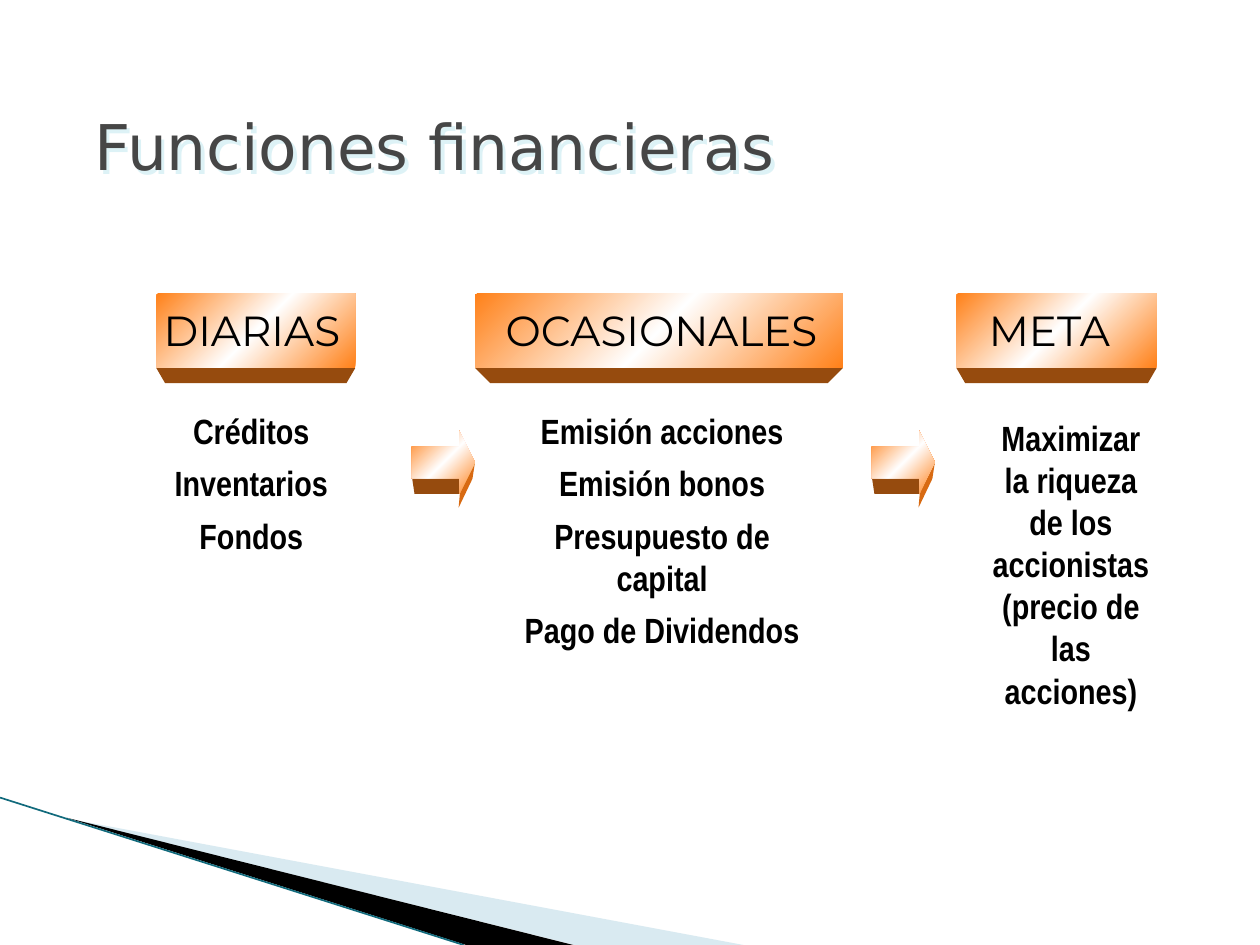
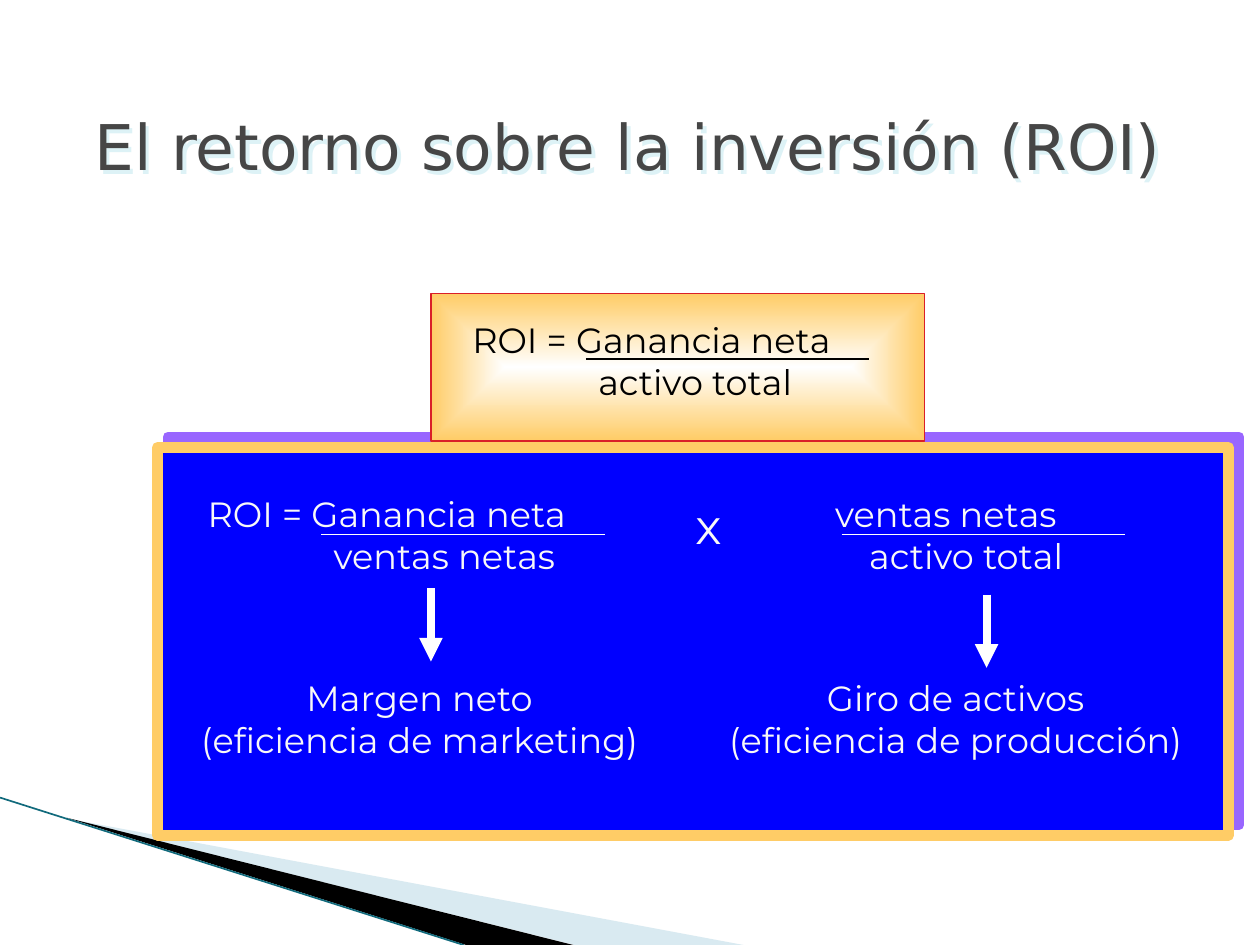
from dataclasses import dataclass

from lxml import etree
from pptx import Presentation
from pptx.dml.color import RGBColor
from pptx.enum.shapes import MSO_CONNECTOR as Connector, MSO_SHAPE as Preset
from pptx.enum.text import MSO_ANCHOR as Anchor, PP_ALIGN as Align
from pptx.oxml import parse_xml
from pptx.oxml.ns import nsdecls, qn
from pptx.util import Inches, Pt

BLACK = RGBColor(0x00, 0x00, 0x00)
WHITE = RGBColor(0xFF, 0xFF, 0xFF)
PALE = RGBColor(0xF8, 0xF8, 0xF8)
TITLE_GREY = RGBColor(0x46, 0x46, 0x46)
TITLE_SHADOW = RGBColor(0xDD, 0xF2, 0xF6)
BAND_BLUE = RGBColor(0xA0, 0xCB, 0xDC)
BAND_TEAL = RGBColor(0x11, 0x6A, 0x7C)
ORANGE = RGBColor(0xFF, 0x81, 0x19)
DARK_ORANGE = RGBColor(0xD8, 0x6A, 0x12)
BROWN = RGBColor(0x96, 0x4B, 0x0E)
BLUE = RGBColor(0x00, 0x00, 0xFF)
GOLD = RGBColor(0xFF, 0xCC, 0x66)
PURPLE = RGBColor(0x99, 0x66, 0xFF)
RED = RGBColor(0xDA, 0x1F, 0x28)

TITLE = dict(size=Pt(36), name="DejaVu Sans", color=TITLE_GREY)
HEADING = dict(size=Pt(24), name="Montserrat", color=BLACK)
ITEM = dict(size=Pt(20), name="Arial Narrow", color=BLACK, bold=True)
FORMULA = dict(size=Pt(20), name="Montserrat", color=BLACK)
PALE_FORMULA = FORMULA | dict(color=PALE)
TIMES = PALE_FORMULA | dict(size=Pt(28))

DIAGONAL = '<a:lin ang="2700000" scaled="1"/>'
FROM_CENTRE = '<a:path path="shape"><a:fillToRect l="50000" t="50000" r="50000" b="50000"/></a:path>'


@dataclass(frozen=True)
class Frame:
    """A rectangle in inches."""
    left: float
    top: float
    width: float
    height: float

    def lengths(self) -> tuple:
        """Return the four sides as slide lengths."""
        return tuple(Inches(side) for side in (self.left, self.top, self.width, self.height))


@dataclass(frozen=True)
class FunctionColumn:
    """A group of financial functions under a raised heading."""
    heading: str
    block: Frame
    heading_frame: Frame
    align: Align
    bevel: float
    items: tuple
    items_frame: Frame


@dataclass(frozen=True)
class Fraction:
    """A numerator over a denominator with a rule between them."""
    lines: tuple
    frame: Frame
    indents: tuple
    rule_left: float
    rule_top: float
    style: dict
    rule_color: RGBColor


COLUMNS = (
    FunctionColumn("DIARIAS", Frame(1.24, 2.33, 1.58, 0.59), Frame(1.2, 2.37, 1.75, 0.5),
                   Align.LEFT, 0.07, ("Créditos", "Inventarios", "Fondos"),
                   Frame(0.91, 3.2, 2.17, 1.3)),
    FunctionColumn("OCASIONALES", Frame(3.77, 2.33, 2.92, 0.59), Frame(3.77, 2.37, 2.96, 0.5),
                   Align.CENTER, 0.12,
                   ("Emisión acciones", "Emisión bonos", "Presupuesto de capital", "Pago de Dividendos"),
                   Frame(3.91, 3.2, 2.69, 2.07)),
    FunctionColumn("META", Frame(7.59, 2.33, 1.59, 0.59), Frame(7.75, 2.37, 1.38, 0.5),
                   Align.LEFT, 0.07,
                   ("Maximizar la riqueza de los accionistas (precio de las acciones)",),
                   Frame(7.75, 3.26, 1.5, 2.43)),
)
ARROW_LEFTS = (3.27, 6.92)

FRACTIONS = (
    Fraction(("ROI = Ganancia neta", "activo total"), Frame(3.65, 2.48, 3.33, 0.77),
             (0, 1), 4.65, 2.85, FORMULA, BLACK),
    Fraction(("ROI = Ganancia neta", "ventas netas"), Frame(1.55, 3.86, 3.33, 0.77),
             (0, 1), 2.55, 4.24, PALE_FORMULA, WHITE),
    Fraction(("ventas netas", "activo total"), Frame(5.8, 3.86, 3.09, 0.77),
             (0.73, 1), 6.68, 4.24, PALE_FORMULA, WHITE),
)
MEANINGS = (
    (("Margen neto", "(eficiencia de marketing)"), Frame(1.32, 5.32, 4.02, 0.77)),
    (("Giro de activos", "(eficiencia de producción)"), Frame(5.5, 5.32, 4.17, 0.77)),
)
DOWN_ARROWS = ((3.42, 4.67), (7.83, 4.72))


def add_shadow(shape, color: RGBColor, distance: float, degrees: int) -> None:
    """Give a shape a hard offset shadow."""
    shape.shadow.inherit = False
    effects = shape._element.spPr.find(qn("a:effectLst"))
    effects.append(parse_xml(
        f'<a:outerShdw {nsdecls("a")} blurRad="0" dist="{Pt(distance)}" dir="{degrees * 60000}" '
        f'algn="ctr" rotWithShape="0"><a:srgbClr val="{color}"/></a:outerShdw>'))


def set_gradient(shape, colors: tuple, direction: str) -> None:
    """Fill a shape with evenly spaced gradient colours."""
    stops = "".join(
        f'<a:gs pos="{100000 * index // (len(colors) - 1)}"><a:srgbClr val="{color}"/></a:gs>'
        for index, color in enumerate(colors))
    shape._element.spPr.find(qn("a:prstGeom")).addnext(parse_xml(
        f'<a:gradFill {nsdecls("a")} rotWithShape="1"><a:gsLst>{stops}</a:gsLst>{direction}</a:gradFill>'))


def add_preset(page, preset: Preset, frame: Frame):
    """Add a flat preset shape without outline."""
    shape = page.shapes.add_shape(preset, *frame.lengths())
    shape.shadow.inherit = False
    shape.line.fill.background()
    return shape


def add_polygon(page, points: tuple, color: RGBColor):
    """Add a filled polygon without outline."""
    (start_x, start_y), *others = [(Inches(x), Inches(y)) for x, y in points]
    builder = page.shapes.build_freeform(start_x, start_y)
    builder.add_line_segments(others, close=True)
    shape = builder.convert_to_shape()
    shape.shadow.inherit = False
    shape.fill.solid()
    shape.fill.fore_color.rgb = color
    shape.line.fill.background()
    return shape


def add_line(page, start: tuple, end: tuple, color: RGBColor, width: float, arrow: bool = False) -> None:
    """Add a straight line, optionally ending in an arrowhead."""
    line = page.shapes.add_connector(
        Connector.STRAIGHT, *(Inches(value) for value in (*start, *end)))
    line.line.color.rgb = color
    line.line.width = Pt(width)
    if arrow:
        etree.SubElement(line.line._get_or_add_ln(), qn("a:tailEnd"), type="triangle")
    etree.SubElement(line._element.spPr, qn("a:effectLst"))


def add_text(page, lines: tuple, frame: Frame, style: dict, align: Align = Align.LEFT,
             gap: float = 0, indents: tuple = (), **para_format):
    """Add a text box with one paragraph for each line."""
    box = page.shapes.add_textbox(*frame.lengths())
    box.text_frame.word_wrap = True
    for index, line in enumerate(lines):
        para = box.text_frame.paragraphs[0] if index == 0 else box.text_frame.add_paragraph()
        if indents and indents[index]:
            para._p.get_or_add_pPr().set("marL", str(Inches(indents[index])))
        for name, value in dict(alignment=align, **para_format).items():
            setattr(para, name, value)
        if index and gap:
            para.space_before = Pt(gap)
        span = para.add_run()
        span.text = line
        for name, value in style.items():
            if name == "color":
                span.font.color.rgb = value
            else:
                setattr(span.font, name, value)
    return box


def add_page(deck, title: str):
    """Add a blank page with the corner bands."""
    page = deck.slides.add_slide(deck.slide_layouts[6])
    light = add_polygon(page, ((0.55, 6.5), (5.9, 7.5), (4.56, 7.5)), BAND_BLUE)
    color = light._element.spPr.find(qn("a:solidFill"))[0]
    etree.SubElement(color, qn("a:alpha"), val="40000")
    add_polygon(page, ((0.53, 6.49), (4.55, 7.5), (3.7, 7.5)), BLACK)
    add_line(page, (0, 6.33), (3.68, 7.5), BAND_TEAL, 0.95)
    box = add_text(page, (title,), Frame(0.65, 0.29, 9.1, 1.21), TITLE, line_spacing=0.8)
    box.text_frame.vertical_anchor = Anchor.BOTTOM
    add_shadow(box, TITLE_SHADOW, 3, 45)
    return page


def draw_column(page, column: FunctionColumn) -> None:
    """Draw a raised heading and the functions below it."""
    block = column.block
    right, bottom = block.left + block.width, block.top + block.height
    add_polygon(page, ((block.left, bottom), (right, bottom),
                       (right - column.bevel, bottom + 0.12),
                       (block.left + column.bevel, bottom + 0.12)), BROWN)
    face = add_preset(page, Preset.RECTANGLE, block)
    set_gradient(face, (ORANGE, WHITE, ORANGE), DIAGONAL)
    add_text(page, (column.heading,), column.heading_frame, HEADING, column.align)
    add_text(page, column.items, column.items_frame, ITEM, Align.CENTER, gap=6)


def draw_raised_arrow(page, left: float, top: float = 3.42) -> None:
    """Draw a right arrow with visible lower sides."""
    shaft = ((0, 0.37), (0.38, 0.37), (0.38, 0.5), (0.02, 0.5))
    head = ((0.5, 0.25), (0.48, 0.38), (0.37, 0.61), (0.38, 0.5))
    for side, color in ((shaft, BROWN), (head, DARK_ORANGE)):
        add_polygon(page, tuple((left + x, top + y) for x, y in side), color)
    arrow = add_preset(page, Preset.RIGHT_ARROW, Frame(left, top, 0.5, 0.5))
    arrow.adjustments[1] = 0.25
    set_gradient(arrow, (ORANGE, WHITE, ORANGE), DIAGONAL)


def draw_fraction(page, fraction: Fraction) -> None:
    """Draw the two lines of a fraction and its rule."""
    add_text(page, fraction.lines, fraction.frame, fraction.style, indents=fraction.indents)
    add_line(page, (fraction.rule_left, fraction.rule_top),
             (fraction.rule_left + 2.25, fraction.rule_top), fraction.rule_color, 0.75)


def build_functions(deck) -> None:
    """Build the page of financial functions."""
    page = add_page(deck, "Funciones financieras")
    for column in COLUMNS:
        draw_column(page, column)
    for left in ARROW_LEFTS:
        draw_raised_arrow(page, left)


def build_return(deck) -> None:
    """Build the page on return on investment."""
    page = add_page(deck, "El retorno sobre la inversión (ROI)")
    panel = add_preset(page, Preset.RECTANGLE, Frame(1.25, 3.55, 8.5, 3.08))
    panel.fill.solid()
    panel.fill.fore_color.rgb = BLUE
    add_shadow(panel, PURPLE, 8.5, 315)
    summary = add_preset(page, Preset.RECTANGLE, Frame(3.42, 2.33, 3.92, 1.17))
    set_gradient(summary, (WHITE, GOLD), FROM_CENTRE)
    for shape, color, width in ((panel, GOLD, 6), (summary, RED, 0.75)):
        shape.line.color.rgb = color
        shape.line.width = Pt(width)
    for fraction in FRACTIONS:
        draw_fraction(page, fraction)
    for lines, frame in MEANINGS:
        add_text(page, lines, frame, PALE_FORMULA, Align.CENTER)
    add_text(page, ("x",), Frame(5.42, 3.88, 0.46, 0.57), TIMES)
    for x, top in DOWN_ARROWS:
        add_line(page, (x, top), (x, top + 0.58), WHITE, 4.5, arrow=True)


def main() -> None:
    """Build and save the deck."""
    deck = Presentation()
    deck.slide_width, deck.slide_height = Inches(10), Inches(7.5)
    build_functions(deck)
    build_return(deck)
    deck.save("out.pptx")


if __name__ == "__main__":
    main()
